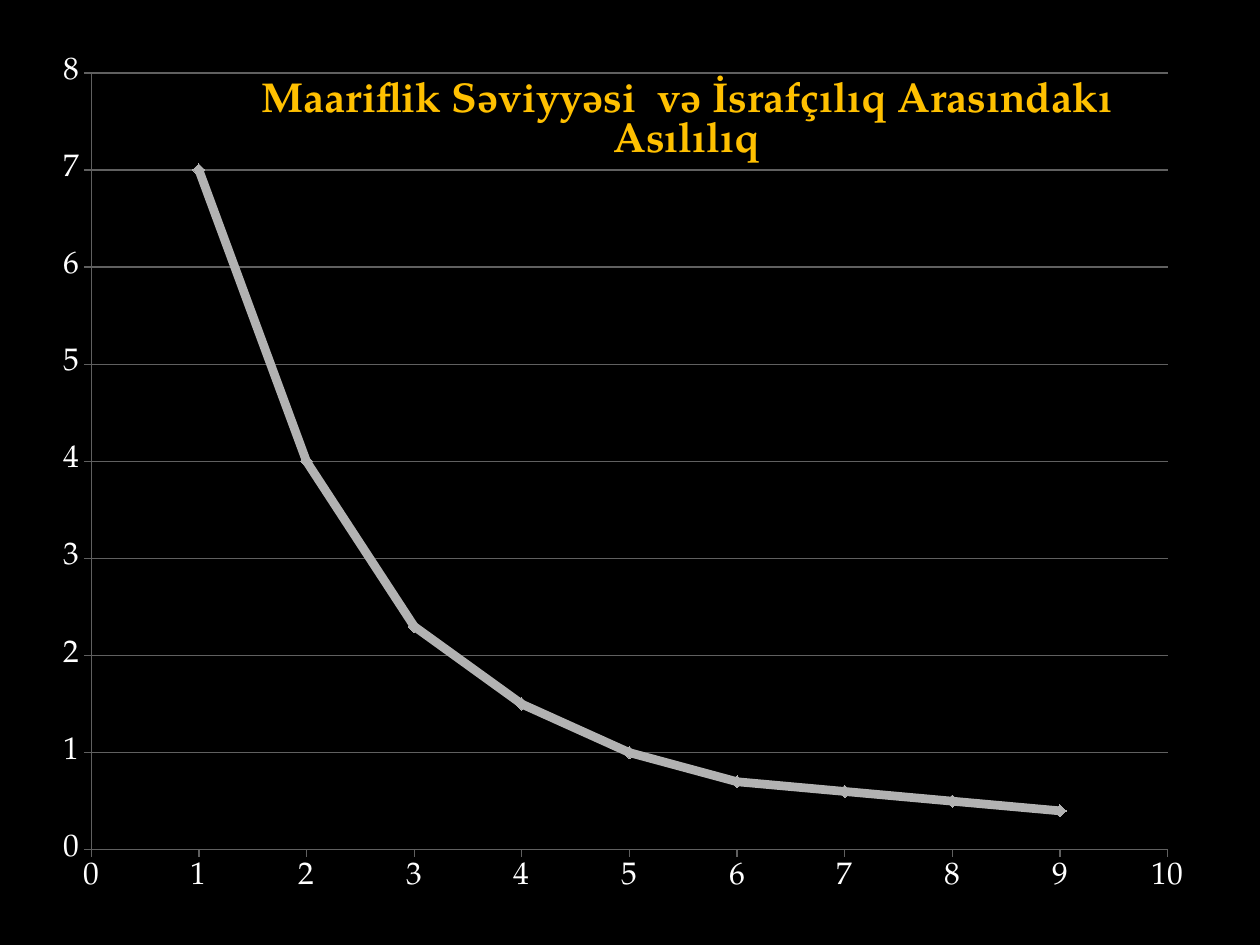
from dataclasses import dataclass

from lxml import etree
from pptx import Presentation
from pptx.chart.data import XyChartData
from pptx.dml.color import RGBColor
from pptx.enum.chart import XL_CHART_TYPE, XL_MARKER_STYLE, XL_TICK_LABEL_POSITION, XL_TICK_MARK
from pptx.oxml.ns import qn
from pptx.util import Inches, Pt

SMOOTH_SCATTER = XL_CHART_TYPE.XY_SCATTER_SMOOTH
DIAMOND = XL_MARKER_STYLE.DIAMOND
OUTSIDE = XL_TICK_MARK.OUTSIDE
NO_TICK = XL_TICK_MARK.NONE
NEXT_TO_AXIS = XL_TICK_LABEL_POSITION.NEXT_TO_AXIS


@dataclass(frozen=True)
class Theme:
    font: str = "TeX Gyre Pagella"
    background: RGBColor = RGBColor(0x00, 0x00, 0x00)
    text: RGBColor = RGBColor(0xFF, 0xFF, 0xFF)
    title: RGBColor = RGBColor(0xFF, 0xC0, 0x00)
    curve: RGBColor = RGBColor(0xB2, 0xB2, 0xB2)
    grid: RGBColor = RGBColor(0x60, 0x60, 0x60)
    label_size: Pt = Pt(18)
    title_size: Pt = Pt(24)
    curve_width: Pt = Pt(5)
    grid_width: Pt = Pt(0.75)


def set_layout(parent, position, **settings):
    for old_layout in parent.findall(qn("c:layout")):
        parent.remove(old_layout)
    layout = etree.Element(qn("c:layout"))
    manual = etree.SubElement(layout, qn("c:manualLayout"))
    for name, value in settings.items():
        etree.SubElement(manual, qn(f"c:{name}")).set("val", str(value))
    parent.insert(position, layout)


theme = Theme()
deck = Presentation()
deck.slide_width = Inches(10)
deck.slide_height = Inches(7.5)
page = deck.slides.add_slide(deck.slide_layouts[6])
page.background.fill.solid()
page.background.fill.fore_color.rgb = theme.background

data = XyChartData()
waste = data.add_series("Series 1")
for level, amount in enumerate([7, 4, 2.3, 1.5, 1, 0.7, 0.6, 0.5, 0.4], start=1):
    waste.add_data_point(level, amount)

chart = page.shapes.add_chart(
    SMOOTH_SCATTER, Inches(0.5), Inches(0.42), Inches(8.92), Inches(6.67), data
).chart
chart.has_legend = False
chart.font.name = theme.font
chart.font.size = theme.label_size
chart.font.color.rgb = theme.text

chart.has_title = True
title = chart.chart_title
title.text_frame.text = "Maariflik Səviyyəsi  və İsrafçılıq Arasındakı Asılılıq"
span = title.text_frame.paragraphs[0].runs[0]
span.font.name = theme.font
span.font.size = theme.title_size
span.font.bold = True
span.font.color.rgb = theme.title
title_element = chart._chartSpace.find(".//" + qn("c:title"))
set_layout(title_element, 1, xMode="edge", yMode="edge", x=0.17, y=0.02)
title_element.find(qn("c:overlay")).set("val", "1")

plot_area = chart._chartSpace.find(".//" + qn("c:plotArea"))
set_layout(
    plot_area, 0, layoutTarget="inner", xMode="edge", yMode="edge",
    x=0.025, y=0.024, w=0.958, h=0.933,
)

for axis, maximum in ((chart.category_axis, 10), (chart.value_axis, 8)):
    axis.minimum_scale = 0
    axis.maximum_scale = maximum
    axis.major_unit = 1
    axis.major_tick_mark = OUTSIDE
    axis.minor_tick_mark = NO_TICK
    axis.tick_label_position = NEXT_TO_AXIS
    axis.tick_labels.number_format = "General"
    axis.tick_labels.number_format_is_linked = False
    axis.format.line.color.rgb = theme.grid
    axis.format.line.width = theme.grid_width

chart.category_axis.has_major_gridlines = False
chart.value_axis.has_major_gridlines = True
grid_line = chart.value_axis.major_gridlines.format.line
grid_line.color.rgb = theme.grid
grid_line.width = theme.grid_width

chart.plots[0].vary_by_categories = False
curve = chart.plots[0].series[0]
curve.smooth = True
curve.format.line.color.rgb = theme.curve
curve.format.line.width = theme.curve_width
curve.marker.style = DIAMOND
curve.marker.size = 7
curve.marker.format.fill.solid()
curve.marker.format.fill.fore_color.rgb = theme.curve
curve.marker.format.line.color.rgb = theme.curve

deck.save("out.pptx")
